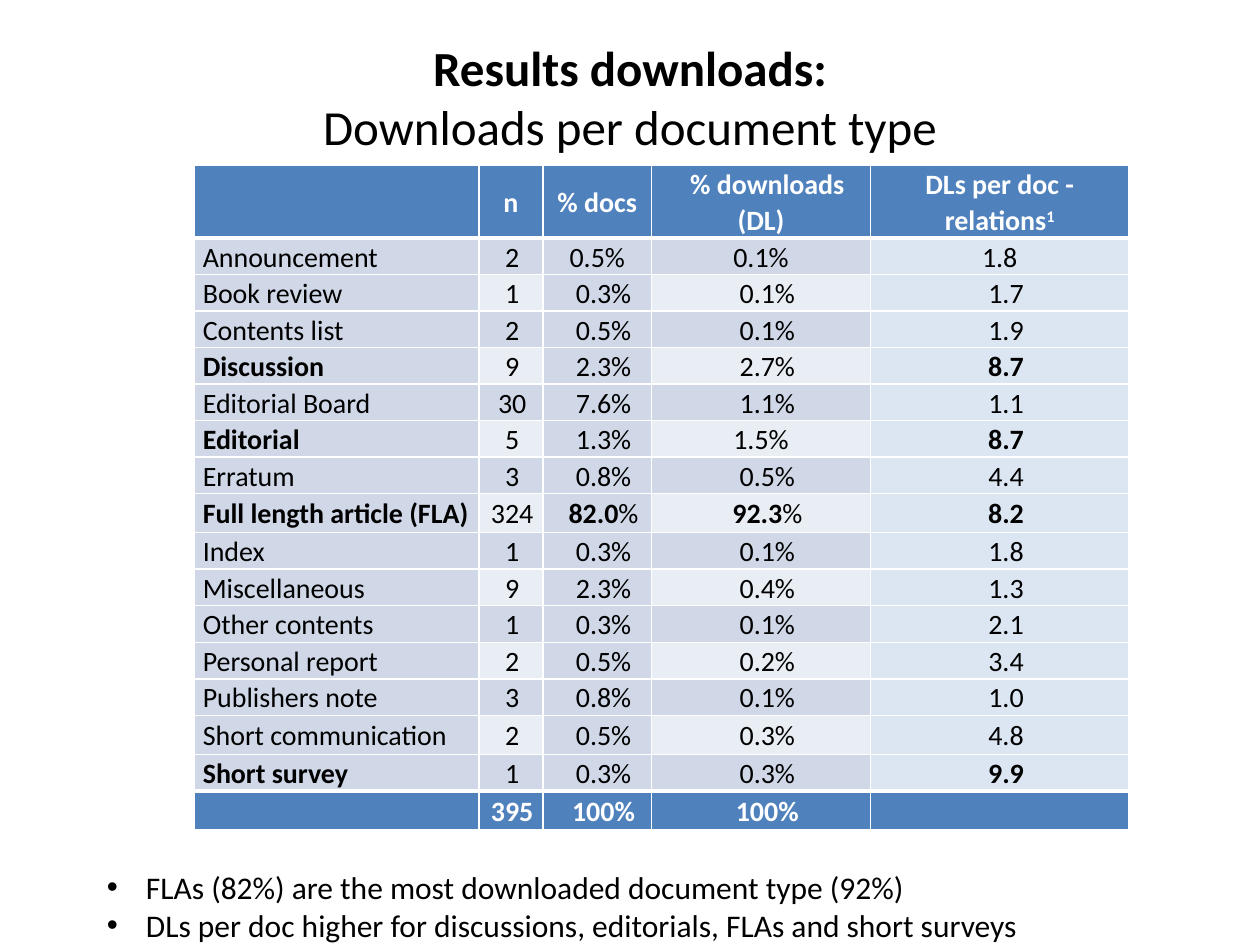
from lxml import etree
from pptx import Presentation
from pptx import util as u
from pptx.dml.color import RGBColor
from pptx.enum import text
from pptx.oxml import ns

Inches = u.Inches
BLACK = RGBColor(0x00, 0x00, 0x00)
WHITE = RGBColor(0xFF, 0xFF, 0xFF)
BLUE = RGBColor(0x4F, 0x81, 0xBD)
BAND_DARK = RGBColor(0xD0, 0xD8, 0xE8)
BAND_LIGHT = RGBColor(0xE9, 0xED, 0xF4)
RELATION = RGBColor(0xDC, 0xE6, 0xF2)
CENTER = text.PP_ALIGN.CENTER

HEADER = ["", "n", "% docs", "% downloads (DL)", "DLs per doc - relations"]
DOCUMENT_TYPES = [
    ("Announcement", "2", "0.5%", "0.1%", "1.8"),
    ("Book review", "1", "0.3%", "0.1%", "1.7"),
    ("Contents list", "2", "0.5%", "0.1%", "1.9"),
    ("Discussion", "9", "2.3%", "2.7%", "8.7"),
    ("Editorial Board", "30", "7.6%", "1.1%", "1.1"),
    ("Editorial", "5", "1.3%", "1.5%", "8.7"),
    ("Erratum", "3", "0.8%", "0.5%", "4.4"),
    ("Full length article (FLA)", "324", "82.0%", "92.3%", "8.2"),
    ("Index", "1", "0.3%", "0.1%", "1.8"),
    ("Miscellaneous", "9", "2.3%", "0.4%", "1.3"),
    ("Other contents", "1", "0.3%", "0.1%", "2.1"),
    ("Personal report", "2", "0.5%", "0.2%", "3.4"),
    ("Publishers note", "3", "0.8%", "0.1%", "1.0"),
    ("Short communication", "2", "0.5%", "0.3%", "4.8"),
    ("Short survey", "1", "0.3%", "0.3%", "9.9"),
]
TOTALS = ["", "395", "100%", "100%", ""]
HIGHLIGHTED = {"Discussion", "Editorial", "Full length article (FLA)", "Short survey"}
TALL = {"Full length article (FLA)", "Short communication"}
COLUMN_WIDTHS = [2.26, 0.51, 0.86, 1.74, 2.05]
FIRST_INDENTS = [0, 0.02, 0.1, 0.1, 0.1]


def write(paragraph, content, size=16, color=BLACK, bold=False, align=None,
          margin=0, indent=0, spacing=None, bullet=None, superscript=False):
    paragraph.alignment = align
    if spacing:
        paragraph.line_spacing = spacing
    properties = paragraph._p.get_or_add_pPr()
    properties.set("marL", str(Inches(margin)))
    properties.set("indent", str(Inches(indent)))
    if bullet:
        etree.SubElement(properties, ns.qn("a:buFont"), typeface="Arial")
        etree.SubElement(properties, ns.qn("a:buChar"), char=bullet)
    if not content:
        paragraph.font.size = u.Pt(size)
        return
    run = paragraph.add_run()
    run.text = content
    font = run.font
    font.name, font.size, font.bold = "Calibri", u.Pt(size), bold
    font.color.rgb = color
    if superscript:
        font._element.set("baseline", "30000")


def set_borders(cell, top, bottom):
    properties = cell._tc.get_or_add_tcPr()
    for side, width in (("L", 1), ("R", 1), ("T", top), ("B", bottom)):
        line = etree.SubElement(properties, ns.qn(f"a:ln{side}"), w=str(u.Pt(width)))
        fill = etree.SubElement(line, ns.qn("a:solidFill"))
        etree.SubElement(fill, ns.qn("a:srgbClr"), val=str(WHITE))


def format_cell(cell, fill, top=1, bottom=1):
    set_borders(cell, top, bottom)
    cell.fill.solid()
    cell.fill.fore_color.rgb = fill
    cell.vertical_anchor = text.MSO_ANCHOR.MIDDLE
    cell.margin_left = cell.margin_right = Inches(0.07)
    cell.margin_top = cell.margin_bottom = 0
    return cell.text_frame.paragraphs[0]


def add_title(slide, box):
    frame = slide.shapes.add_textbox(*map(Inches, box)).text_frame
    frame.word_wrap = True
    frame.vertical_anchor = text.MSO_ANCHOR.MIDDLE
    heading = frame.paragraphs[0]
    write(heading, "Results downloads:", size=28, bold=True, align=CENTER)
    heading.add_line_break()
    write(heading, "Downloads per document type", size=28, align=CENTER)


def band_color(row, column):
    if column == 4:
        return RELATION
    return BAND_LIGHT if row % 2 == 0 and column in (1, 3) else BAND_DARK


def fill_document_row(table, row, values):
    name = values[0]
    for column, value in enumerate(values):
        top = 3 if row == 1 else 1
        bottom = 3 if row == len(DOCUMENT_TYPES) else 1
        paragraph = format_cell(table.cell(row, column), band_color(row, column), top, bottom)
        margin, indent = 0, FIRST_INDENTS[column]
        if row == 1 and column > 1:
            indent = 0
        if name == "Editorial" and column == 3:
            margin, indent = 0.1, -0.1
        layout = dict(align=CENTER if column else None, margin=margin,
                      indent=indent, spacing=1.07)
        if name.startswith("Full") and column in (2, 3):
            write(paragraph, value[:-1], bold=True, **layout)
            write(paragraph, "%", **layout)
        else:
            write(paragraph, value, bold=name in HIGHLIGHTED and column in (0, 4), **layout)


def fill_blue_row(table, row, values, indents, **borders):
    for column, value in enumerate(values):
        paragraph = format_cell(table.cell(row, column), BLUE, **borders)
        layout = dict(color=WHITE, bold=True, align=CENTER,
                      indent=indents[column], spacing=1.07)
        write(paragraph, value, **layout)
        if value.endswith("relations"):
            write(paragraph, "1", superscript=True, **layout)


def add_downloads_table(slide, box):
    last = len(DOCUMENT_TYPES) + 1
    table = slide.shapes.add_table(last + 1, len(HEADER), *map(Inches, box)).table
    table.first_row = table.horz_banding = False
    for column, width in zip(table.columns, COLUMN_WIDTHS):
        column.width = Inches(width)
    for row in table.rows:
        row.height = Inches(0.29)
    table.rows[0].height = Inches(0.58)
    table.rows[last].height = Inches(0.31)
    fill_blue_row(table, 0, HEADER, [0, 0, 0, 0.1, 0], bottom=3)
    for row, values in enumerate(DOCUMENT_TYPES, start=1):
        fill_document_row(table, row, values)
        if values[0] in TALL:
            table.rows[row].height = Inches(0.31)
    fill_blue_row(table, last, TOTALS, FIRST_INDENTS, top=3)


def add_findings(slide, box):
    frame = slide.shapes.add_textbox(*map(Inches, box)).text_frame
    frame.word_wrap = False
    findings = [
        "FLAs (82%) are the most downloaded document type (92%)",
        "DLs per doc higher for discussions, editorials, FLAs and short surveys",
    ]
    for index, finding in enumerate(findings):
        paragraph = frame.add_paragraph() if index else frame.paragraphs[0]
        write(paragraph, finding, size=18, margin=0.31, indent=-0.31, bullet="•")


def main():
    deck = Presentation()
    deck.slide_width, deck.slide_height = Inches(10), Inches(7.5)
    slide = deck.slides.add_slide(deck.slide_layouts[6])
    add_title(slide, (0.5, 0.3, 9, 0.93))
    add_downloads_table(slide, (1.54, 1.31, 7.43, 5.3))
    add_findings(slide, (0.75, 6.84, 7.51, 1.01))
    deck.save("out.pptx")


if __name__ == "__main__":
    main()
